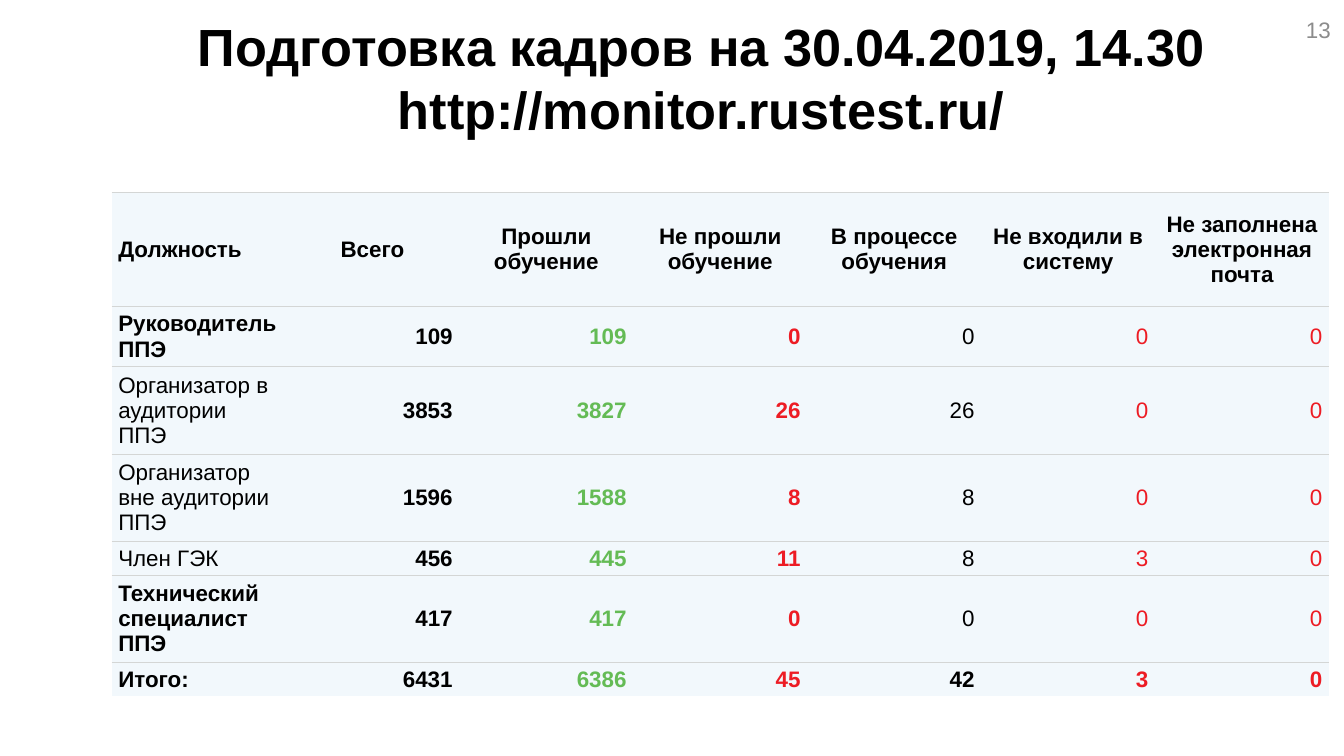
from dataclasses import dataclass

import pptx
import pptx.dml.color
import pptx.enum.text
import pptx.oxml
import pptx.oxml.ns
import pptx.util
from pptx.util import Inches

ALIGN = pptx.enum.text.PP_ALIGN
MIDDLE = pptx.enum.text.MSO_ANCHOR.MIDDLE


@dataclass(frozen=True)
class Theme:
    font: str = "Arial"
    text: str = "000000"
    muted: str = "8C8C8C"
    passed: str = "64BB55"
    alert: str = "ED1C24"
    cell: str = "F2F8FC"
    rule: str = "D4D6D5"
    title_size: float = 28
    body_size: float = 12
    rule_width: float = 0.6


THEME = Theme()

HEADINGS = [
    "Должность", "Всего", "Прошли обучение", "Не прошли обучение",
    "В процессе обучения", "Не входили в систему",
    "Не заполнена электронная почта",
]
# Position, counts, whether the position name is bold
STAFF = [
    ("Руководитель ППЭ", (109, 109, 0, 0, 0, 0), True),
    ("Организатор в аудитории ППЭ", (3853, 3827, 26, 26, 0, 0), False),
    ("Организатор вне аудитории ППЭ", (1596, 1588, 8, 8, 0, 0), False),
    ("Член ГЭК", (456, 445, 11, 8, 3, 0), False),
    ("Технический специалист ППЭ", (417, 417, 0, 0, 0, 0), True),
    ("Итого:", (6431, 6386, 45, 42, 3, 0), True),
]
COUNT_COLORS = [THEME.text, THEME.passed, THEME.alert,
                THEME.text, THEME.alert, THEME.alert]
BOLD_COUNTS = 3
ROW_HEIGHTS = [0.85, 0.45, 0.65, 0.65, 0.25, 0.65, 0.25]
TABLE_WIDTH = 9.06
CELL_MARGIN = 0.05
SLIDE_WIDTH = 10


def format_paragraph(paragraph, size, color, bold, align):
    paragraph.alignment = align
    for run in paragraph.runs:
        run.font.name = THEME.font
        run.font.size = pptx.util.Pt(size)
        run.font.bold = bold
        run.font.color.rgb = pptx.dml.color.RGBColor.from_string(color)


def add_text(slide, box, lines, size, color, bold, align):
    frame = slide.shapes.add_textbox(*map(Inches, box)).text_frame
    frame.word_wrap = True
    frame.text = "\n".join(lines)
    for paragraph in frame.paragraphs:
        format_paragraph(paragraph, size, color, bold, align)
    return frame


def set_borders(cell, ruled_sides):
    """Rule the given sides and clear the others; the fill must come later."""
    properties = cell._tc.get_or_add_tcPr()
    for side in "LRTB":
        if side in ruled_sides:
            paint = f'<a:solidFill><a:srgbClr val="{THEME.rule}"/></a:solidFill>'
        else:
            paint = "<a:noFill/>"
        properties.append(pptx.oxml.parse_xml(
            f'<a:ln{side} {pptx.oxml.ns.nsdecls("a")} '
            f'w="{pptx.util.Pt(THEME.rule_width)}">{paint}</a:ln{side}>'))


def fill_cell(cell, text, color, bold, align, ruled_sides):
    cell.text = text
    cell.vertical_anchor = MIDDLE
    cell.margin_left = cell.margin_right = Inches(CELL_MARGIN)
    cell.margin_top = cell.margin_bottom = Inches(CELL_MARGIN / 2)
    set_borders(cell, ruled_sides)
    cell.fill.solid()
    cell.fill.fore_color.rgb = pptx.dml.color.RGBColor.from_string(THEME.cell)
    format_paragraph(cell.text_frame.paragraphs[0], THEME.body_size,
                     color, bold, align)


def add_training_table(slide):
    table = slide.shapes.add_table(
        len(ROW_HEIGHTS), len(HEADINGS), Inches(0.83), Inches(1.43),
        Inches(TABLE_WIDTH), Inches(sum(ROW_HEIGHTS))).table
    table.first_row = table.horz_banding = False
    for column in table.columns:
        column.width = Inches(TABLE_WIDTH / len(HEADINGS))
    for row, height in zip(table.rows, ROW_HEIGHTS):
        row.height = Inches(height)

    for col, heading in enumerate(HEADINGS):
        align = ALIGN.CENTER if col else ALIGN.LEFT
        fill_cell(table.cell(0, col), heading, THEME.text, True, align, "TB")

    for row, (position, counts, bold) in enumerate(STAFF, start=1):
        is_total = row == len(STAFF)
        sides = "T" if is_total else "TB"
        fill_cell(table.cell(row, 0), position, THEME.text, bold,
                  ALIGN.LEFT, sides)
        for col, (count, color) in enumerate(zip(counts, COUNT_COLORS), start=1):
            fill_cell(table.cell(row, col), str(count), color,
                      is_total or col <= BOLD_COUNTS, ALIGN.RIGHT, sides)


def main():
    presentation = pptx.Presentation()
    presentation.slide_width = Inches(SLIDE_WIDTH)
    presentation.slide_height = Inches(SLIDE_WIDTH * 9 / 16)
    slide = presentation.slides.add_slide(presentation.slide_layouts[6])

    add_text(slide, (0.59, 0.06, 9.25, 1.04),
             ["Подготовка кадров на 30.04.2019, 14.30",
              "http://monitor.rustest.ru/"],
             THEME.title_size, THEME.text, True, ALIGN.CENTER)
    page_number = add_text(slide, (7.67, 0.02, 2.33, 0.4), ["13"],
                           THEME.body_size, THEME.muted, False, ALIGN.RIGHT)
    page_number.vertical_anchor = MIDDLE
    add_training_table(slide)

    presentation.save("out.pptx")


if __name__ == "__main__":
    main()
